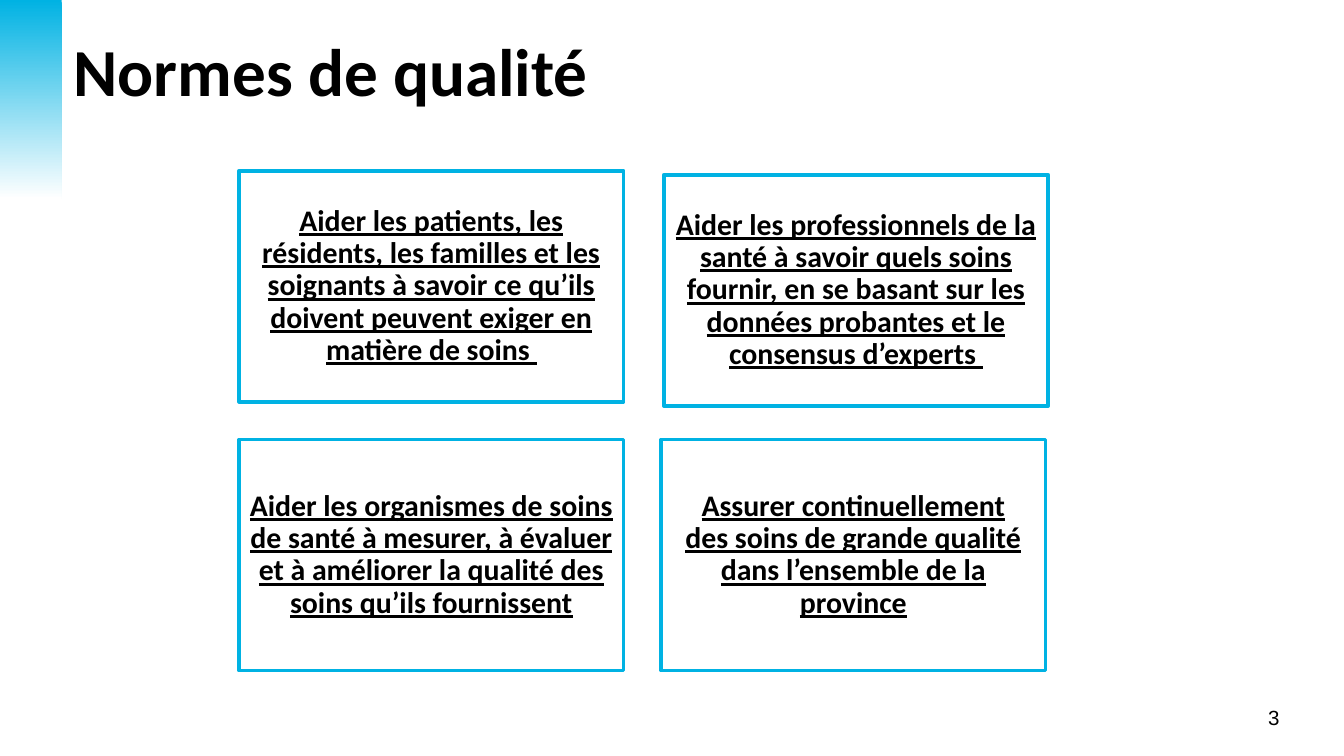
import pptx
import pptx.util
import pptx.dml.color
import pptx.enum.shapes
import pptx.enum.text
from dataclasses import dataclass

Inches = pptx.util.Inches
Pt = pptx.util.Pt
RGB = pptx.dml.color.RGBColor
Align = pptx.enum.text.PP_ALIGN
Anchor = pptx.enum.text.MSO_ANCHOR
RECTANGLE = pptx.enum.shapes.MSO_SHAPE.RECTANGLE


@dataclass
class Theme:
    accent: RGB = RGB(0x00, 0xB2, 0xE3)
    white: RGB = RGB(0xFF, 0xFF, 0xFF)
    ink: RGB = RGB(0, 0, 0)
    font: str = "Calibri"
    number_font: str = "Arial"
    title_size: int = 36
    goal_size: int = 16
    number_size: int = 11


theme = Theme()


def write(box, text, font, size, align, anchor=Anchor.MIDDLE, bold=False):
    """Fill a box with one paragraph and return it."""
    frame = box.text_frame
    frame.word_wrap = True
    frame.vertical_anchor = anchor
    para = frame.paragraphs[0]
    para.text = text
    para.alignment = align
    para.font.name = font
    para.font.size = Pt(size)
    para.font.bold = bold
    para.font.color.rgb = theme.ink
    return para


# Widescreen page, 16:9
deck = pptx.Presentation()
deck.slide_width = Inches(10)
deck.slide_height = deck.slide_width * 9 // 16
page = deck.slides.add_slide(deck.slide_layouts[6])

# Corner band, fading downwards
band = page.shapes.add_shape(RECTANGLE, 0, 0, Inches(0.46), Inches(1.48))
band.shadow.inherit = False
band.line.fill.background()
band.fill.gradient()
band.fill.gradient_angle = 270
for position, color in enumerate((theme.accent, theme.white)):
    stop = band.fill.gradient_stops[position]
    stop.color.rgb = color
    stop.position = position

# Title
title = page.shapes.add_textbox(Inches(0.45), Inches(0.17), Inches(7.03), Inches(0.79))
write(title, "Normes de qualité", theme.font, theme.title_size, Align.LEFT, Anchor.TOP, bold=True)

# Four goals: left, top, text
goals = [
    (1.78, 1.27, "Aider les patients, les résidents, les familles et les soignants "
                 "à savoir ce qu’ils doivent peuvent exiger en matière de soins\u00a0"),
    (4.94, 1.30, "Aider les professionnels de la santé à savoir quels soins fournir, "
                 "en se basant sur les données probantes et le consensus d’experts\u00a0"),
    (1.78, 3.27, "Aider les organismes de soins de santé à mesurer, à évaluer "
                 "et à améliorer la qualité des soins qu’ils fournissent"),
    (4.92, 3.27, "Assurer continuellement\vdes soins de grande qualité "
                 "dans l’ensemble de la province"),
]
for left, top, text in goals:
    box = page.shapes.add_shape(RECTANGLE, Inches(left), Inches(top), Inches(2.86), Inches(1.72))
    box.shadow.inherit = False
    box.fill.background()
    box.line.color.rgb = theme.accent
    box.line.width = Pt(2)
    frame = box.text_frame
    frame.margin_left = frame.margin_right = Inches(0.07)
    frame.margin_top = frame.margin_bottom = Inches(0.07)
    para = write(box, text, theme.font, theme.goal_size, Align.CENTER, bold=True)
    para.font.underline = True
    para.line_spacing = 0.9

# Page number
number = page.shapes.add_textbox(Inches(8.45), Inches(5.19), Inches(1.17), Inches(0.29))
write(number, "3", theme.number_font, theme.number_size, Align.RIGHT)

deck.save("out.pptx")
